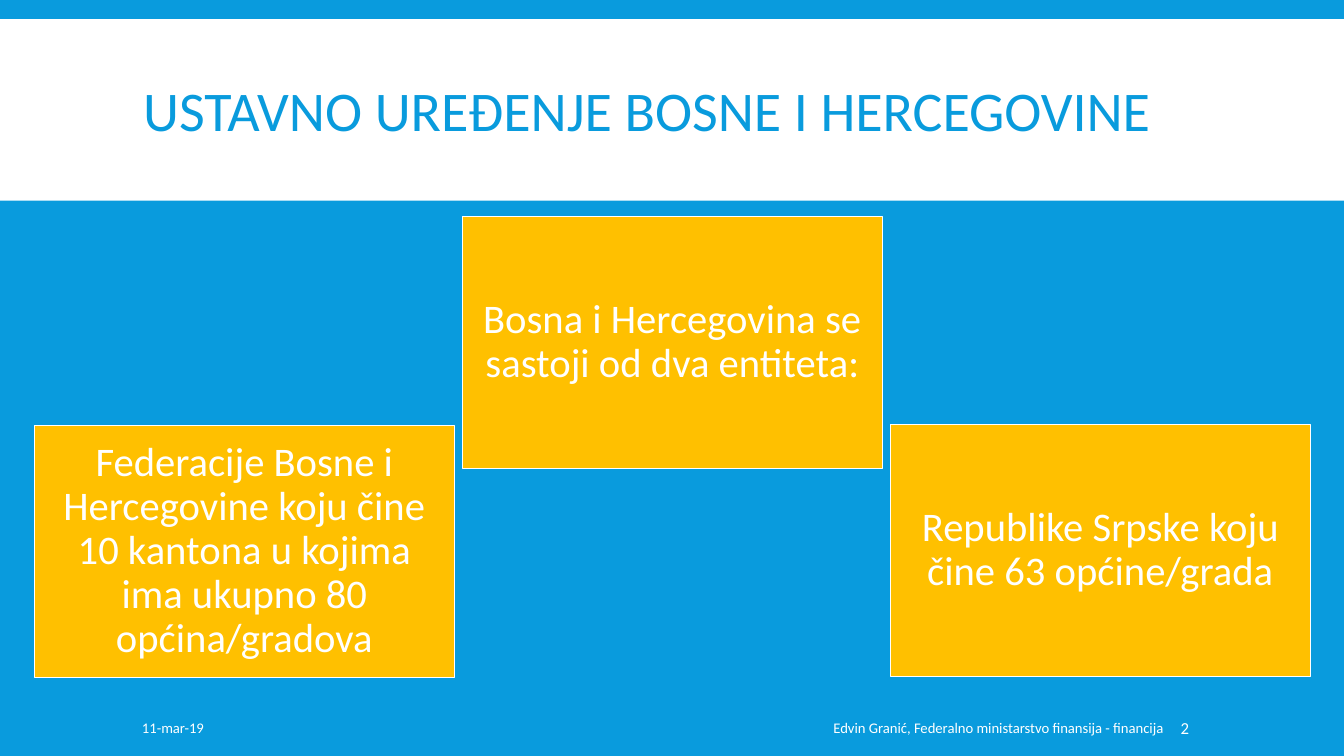
from pptx import Presentation
from pptx.dml.color import RGBColor
from pptx.enum.shapes import MSO_SHAPE
from pptx.enum.text import MSO_ANCHOR, PP_ALIGN
from pptx.util import Inches, Pt

RECT = MSO_SHAPE.RECTANGLE
MIDDLE = MSO_ANCHOR.MIDDLE
LEFT, CENTER, RIGHT = PP_ALIGN.LEFT, PP_ALIGN.CENTER, PP_ALIGN.RIGHT

SLIDE_W, SLIDE_H = 13.33, 7.5
TITLE_ONLY = 5
FONT = "Calibri"
COLORS = {"blue": "099BDD", "white": "FFFFFF", "amber": "FFC000"}

TITLE = "USTAVNO UREĐENJE BOSNE I HERCEGOVINE"
# Text, column and vertical offset of each box in the diagram
ENTITIES = [
    ("Bosna i Hercegovina se sastoji od dva entiteta:", 1, 0),
    ("Federacije Bosne i Hercegovine koju čine 10 kantona u kojima "
     "ima ukupno 80 općina/gradova", 0, 2.07),
    ("Republike Srpske koju čine 63 općine/grada", 2, 2.06),
]
# Text, left offset, width, size, alignment, left and right inset
FOOTER = [
    ("11-mar-19", 0, 3.28, 10.5, LEFT, 0.1, 0.05),
    ("Edvin Granić, Federalno ministarstvo finansija - financija",
     4.81, 5.52, 10.5, RIGHT, 0.1, 0.1),
    ("2", 10.35, 1.03, 12, LEFT, 0.05, 0.1),
]


def rgb(name):
    return RGBColor.from_string(COLORS[name])


def write(sp, text, size, color, align, spacing=1.0, insets=(0.1, 0.05, 0.1, 0.05)):
    tf = sp.text_frame
    tf.word_wrap = True
    tf.vertical_anchor = MIDDLE
    tf.margin_left, tf.margin_top, tf.margin_right, tf.margin_bottom = map(Inches, insets)
    p = tf.paragraphs[0]
    p.text = text
    p.alignment = align
    p.line_spacing = spacing
    p.font.name = FONT
    p.font.size = Pt(size)
    p.font.color.rgb = rgb(color)


def add_rect(s, box, fill):
    sp = s.shapes.add_shape(RECT, *map(Inches, box))
    sp.shadow.inherit = False
    sp.fill.solid()
    sp.fill.fore_color.rgb = rgb(fill)
    sp.line.fill.background()
    return sp


def add_header(s, x, y, w, h):
    # White band goes behind the title placeholder
    band = add_rect(s, (x, y, w, h), "white")
    s.shapes._spTree.insert(2, band._element)
    title = s.shapes.title
    title.left, title.top = Inches(x + 1.32), Inches(y + 0.12)
    title.width, title.height = Inches(10.7), Inches(h - 0.15)
    write(title, TITLE, 40, "blue", LEFT, 0.85)


def add_diagram(s, x, y, w):
    # Three equal columns separated by a narrow gap
    gap = 0.075
    box_w, box_h = (w - 2 * gap) / 3, 2.5
    for text, col, drop in ENTITIES:
        sp = add_rect(s, (x + col * (box_w + gap), y + drop, box_w, box_h), "amber")
        sp.line.color.rgb = rgb("white")
        sp.line.width = Pt(1)
        write(sp, text, 29, "white", CENTER, 0.9, (0.12,) * 4)


def add_footer(s, x, y, h):
    for text, dx, w, size, align, inset_l, inset_r in FOOTER:
        sp = s.shapes.add_textbox(*map(Inches, (x + dx, y, w, h)))
        write(sp, text, size, "white", align, insets=(inset_l, 0.05, inset_r, 0.05))


def main():
    prs = Presentation()
    prs.slide_width, prs.slide_height = Inches(SLIDE_W), Inches(SLIDE_H)
    s = prs.slides.add_slide(prs.slide_layouts[TITLE_ONLY])
    s.background.fill.solid()
    s.background.fill.fore_color.rgb = rgb("blue")
    add_header(s, 0, 0.19, SLIDE_W, 1.8)
    add_diagram(s, 0.34, 2.15, 12.66)
    add_footer(s, 1.31, 7.02, 0.4)
    prs.save("out.pptx")


if __name__ == "__main__":
    main()
